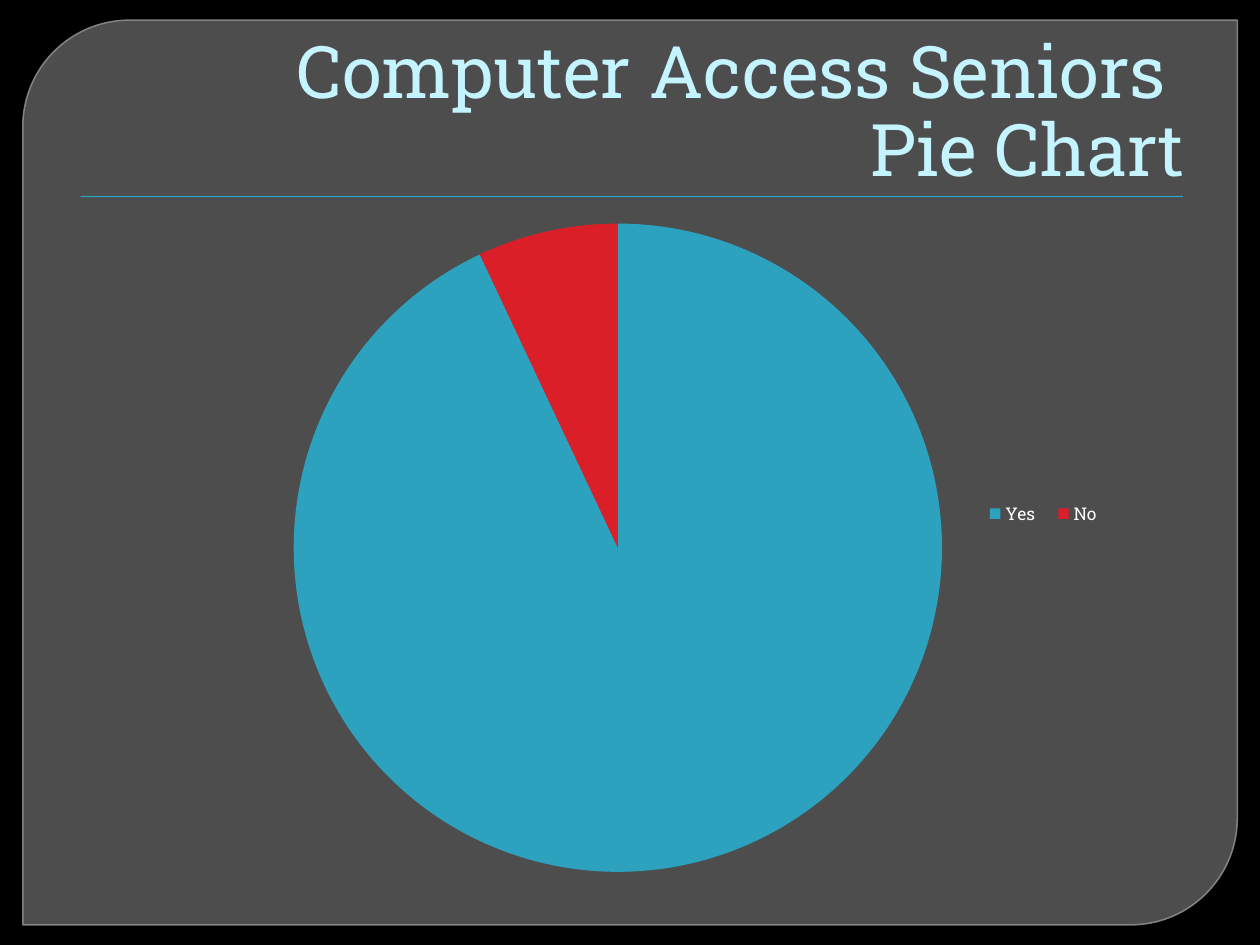
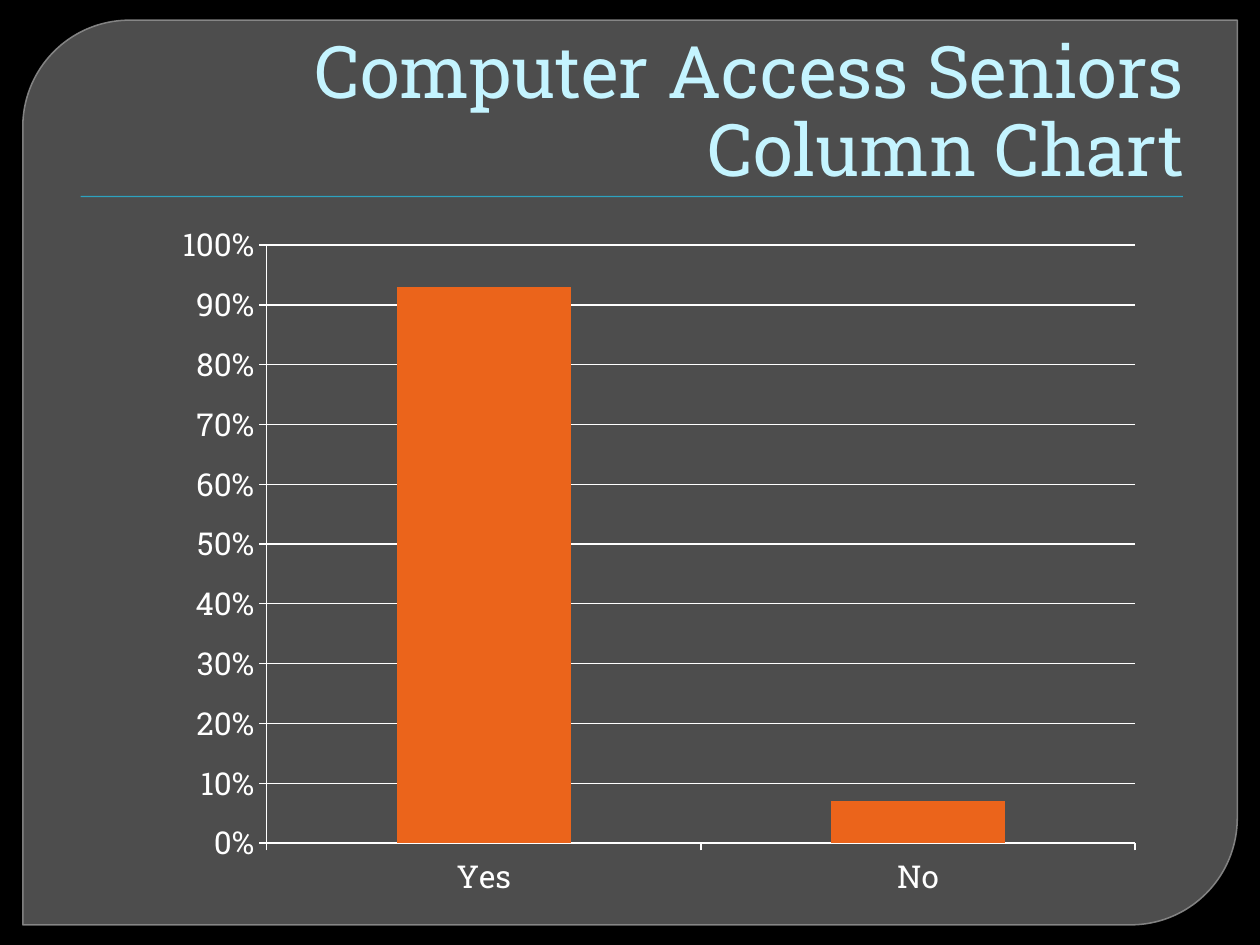
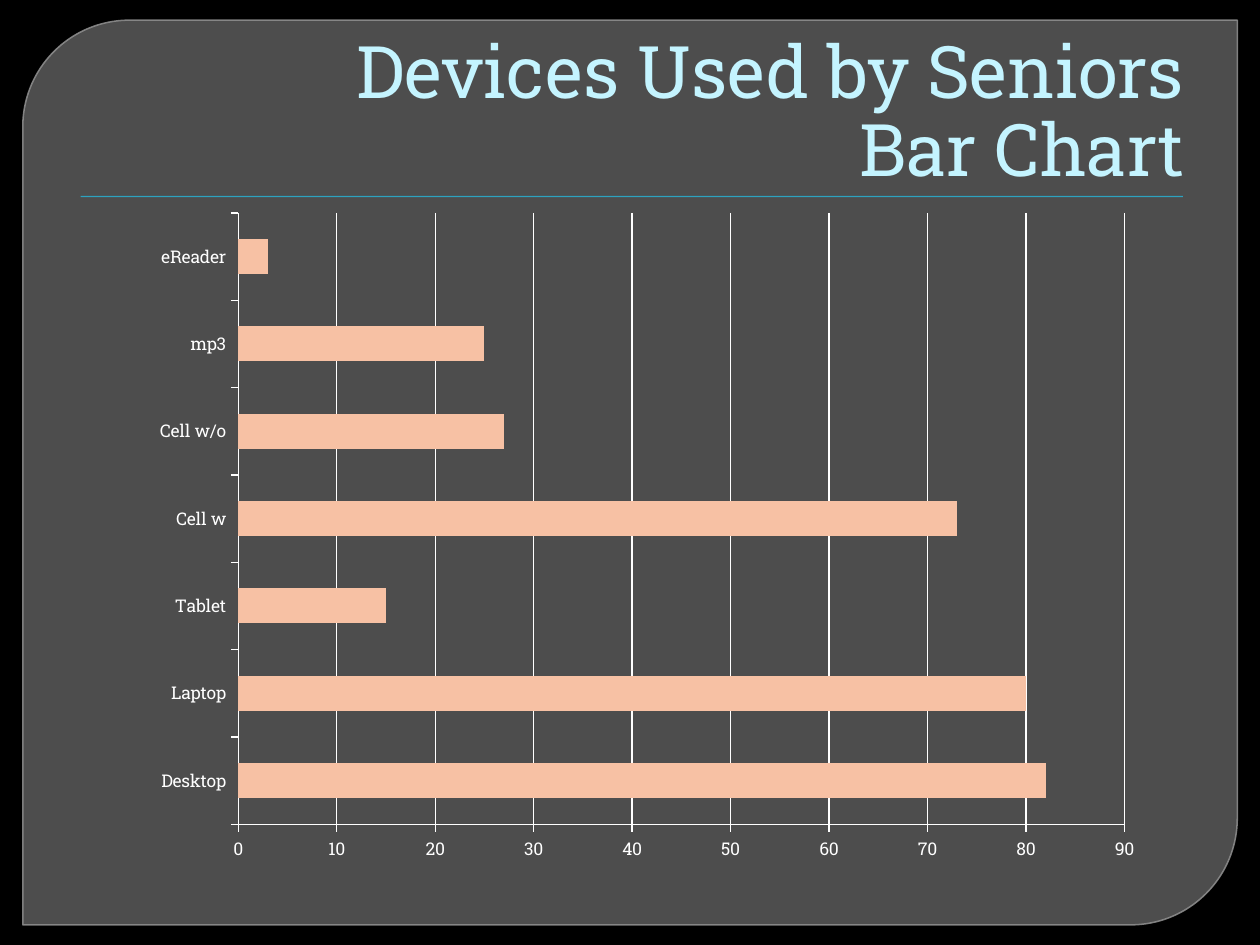
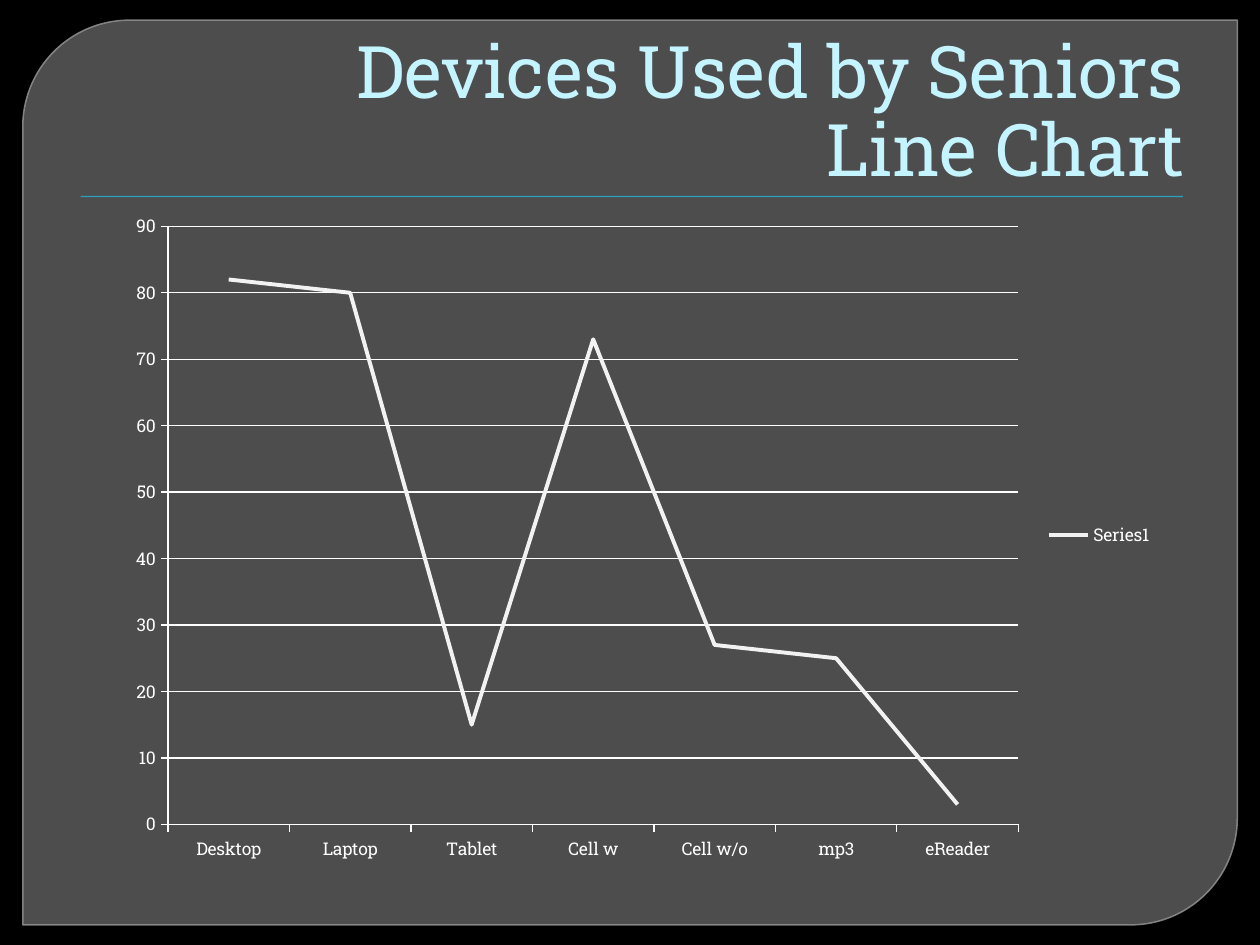
"""Build four dark slides that chart computer access and devices among seniors."""
from dataclasses import dataclass

from lxml import etree
from pptx import Presentation
from pptx.chart.data import CategoryChartData
from pptx.dml.color import RGBColor
from pptx.enum import chart as ch, shapes, text
from pptx.oxml.ns import qn
from pptx.util import Pt


@dataclass(frozen=True)
class Theme:
    font: str = "Roboto Slab"
    back: str = "000000"
    panel: str = "777777"
    edge: str = "8E8E8E"
    title: str = "C4F4FF"
    white: str = "FFFFFF"
    blue: str = "2DA2BF"
    red: str = "DA1F28"
    orange: str = "EB641B"
    peach: str = "F7C1A4"
    pale: str = "F2F2F2"
    title_size: float = 41.4
    small: int = 10
    large: int = 18
    hairline: float = 0.75


class Deck:
    def __init__(self, theme):
        self.t = theme
        self.prs = Presentation()
        self.prs.slide_width, self.prs.slide_height = Pt(720), Pt(540)
        self.layout = self.prs.slide_layouts[5]
        self.s = None
        self.paint(self.prs.slide_master.background.fill, theme.back)

    def paint(self, fill, color, alpha=None):
        fill.solid()
        fill.fore_color.rgb = RGBColor.from_string(color)
        if alpha is not None:
            clr = fill._xPr.find(".//" + qn("a:srgbClr"))
            etree.SubElement(clr, qn("a:alpha")).set("val", str(alpha * 1000))

    def style_font(self, font, size, color):
        font.name, font.size = self.t.font, Pt(size)
        font.color.rgb = RGBColor.from_string(color)

    def style_line(self, line, color, width):
        self.paint(line.fill, color)
        line.width = Pt(width)

    def shape(self, kind, box, color, alpha=None):
        sp = self.s.shapes.add_shape(kind, *map(Pt, box))
        sp.shadow.inherit = False
        self.paint(sp.fill, color, alpha)
        sp.line.fill.background()
        return sp

    def backdrop(self):
        panel = self.shape(shapes.MSO_SHAPE.ROUND_2_DIAG_RECTANGLE,
                           (13, 11.5, 694, 517), self.t.panel, 65)
        panel.adjustments[0], panel.adjustments[1] = 0.118, 0
        panel.line.width = Pt(0.87)
        self.paint(panel.line.fill, self.t.edge, 88)
        rule = self.shape(shapes.MSO_SHAPE.RECTANGLE, (46, 112, 630, 0.75), self.t.blue)
        for i, sp in enumerate((panel, rule)):
            sp._element.nvSpPr.cNvPr.set("id", str(20 + i))
            self.layout.shapes._spTree.insert(2 + i, sp._element)

    def slide(self, title):
        first = self.s is None
        self.s = self.prs.slides.add_slide(self.layout)
        if first:
            self.backdrop()
        sp = self.s.shapes.title
        sp.left, sp.top, sp.width, sp.height = map(Pt, (36, 20, 648, 90))
        tf = sp.text_frame
        tf.text = title
        tf.auto_size = text.MSO_AUTO_SIZE.NONE
        tf.vertical_anchor = text.MSO_ANCHOR.BOTTOM
        tf.margin_top = tf.margin_bottom = 0
        p = tf.paragraphs[0]
        p.alignment = text.PP_ALIGN.RIGHT
        p.line_spacing = 0.9
        self.style_font(p.font, self.t.title_size, self.t.title)

    def place(self, el, index, box, inner=False):
        for old in el.findall(qn("c:layout")):
            el.remove(old)
        layout = etree.Element(qn("c:layout"))
        manual = etree.SubElement(layout, qn("c:manualLayout"))
        values = [("layoutTarget", "inner")] if inner else []
        values += [("xMode", "edge"), ("yMode", "edge"), *zip("xywh", box)]
        for tag, value in values:
            etree.SubElement(manual, qn("c:" + tag)).set("val", str(value))
        el.insert(index, layout)

    def chart(self, kind, box, plot, cats, vals, size, name="Series 1", fmt="General"):
        data = CategoryChartData(number_format=fmt)
        data.categories = cats
        data.add_series(name, vals)
        chart = self.s.shapes.add_chart(kind, *map(Pt, box), data).chart
        chart.has_title = chart.has_legend = False
        self.style_font(chart.font, size, self.t.white)
        self.place(chart._chartSpace.chart.plotArea, 0, plot, inner=True)
        return chart

    def legend(self, chart, box=None):
        chart.has_legend = True
        chart.legend.position = ch.XL_LEGEND_POSITION.RIGHT
        chart.legend.include_in_layout = False
        if box:
            self.place(chart.legend._element, 1, box)

    def axes(self, chart, top, step, fmt="General"):
        val = chart.value_axis
        val.minimum_scale, val.maximum_scale, val.major_unit = 0, top, step
        val.has_major_gridlines = True
        val.tick_labels.number_format = fmt
        val.tick_labels.number_format_is_linked = False
        for axis in (val, chart.category_axis):
            axis.major_tick_mark = ch.XL_TICK_MARK.OUTSIDE
            self.style_line(axis.format.line, self.t.white, self.t.hairline)
        self.style_line(val.major_gridlines.format.line, self.t.white, self.t.hairline)

    def pie(self, box, plot, legend, cats, vals, colors):
        chart = self.chart(ch.XL_CHART_TYPE.PIE, box, plot, cats, vals, self.t.small)
        self.legend(chart, legend)
        for i, color in enumerate(colors):
            self.paint(chart.plots[0].series[0].points[i].format.fill, color)

    def bars(self, kind, box, plot, cats, vals, color, size, top, step, fmt="General"):
        chart = self.chart(kind, box, plot, cats, vals, size, fmt=fmt)
        self.axes(chart, top, step, fmt)
        bars = chart.plots[0]
        bars.gap_width, bars.vary_by_categories = 150, False
        self.paint(bars.series[0].format.fill, color)

    def line(self, box, plot, cats, vals, name, top, step):
        chart = self.chart(ch.XL_CHART_TYPE.LINE_STACKED, box, plot, cats, vals,
                           self.t.small, name)
        self.axes(chart, top, step)
        self.legend(chart)
        chart.plots[0].vary_by_categories = False
        series = chart.plots[0].series[0]
        series.smooth = False
        series.marker.style = ch.XL_MARKER_STYLE.NONE
        self.style_line(series.format.line, self.t.pale, 2.25)


def main():
    t = Theme()
    d = Deck(t)
    answers = ("Yes", "No")
    devices = ("Desktop", "Laptop", "Tablet", "Cell w", "Cell w/o", "mp3", "eReader")
    users = (82, 80, 15, 73, 27, 25, 3)

    d.slide("Computer Access Seniors \vPie Chart")
    d.pie((102, 120, 540, 390), (0.12, 0.02, 0.69, 0.95), (0.84, 0.41, 0.15, 0.07),
          answers, (93, 7), (t.blue, t.red))

    d.slide("Computer Access Seniors\vColumn Chart")
    d.bars(ch.XL_CHART_TYPE.COLUMN_CLUSTERED, (96, 120, 564, 402),
           (0.1, 0.05, 0.88, 0.85), answers, (0.93, 0.07), t.orange, t.large,
           1, 0.1, "0%")

    d.slide("Devices Used by Seniors\vBar Chart")
    d.bars(ch.XL_CHART_TYPE.BAR_CLUSTERED, (78, 114, 582, 384),
           (0.1, 0.02, 0.87, 0.91), devices, users, t.peach, t.small, 90, 10)

    d.slide("Devices Used by Seniors\vLine Chart")
    d.line((66, 114, 600, 384), (0.05, 0.04, 0.81, 0.89), devices, users,
           "Series1", 90, 10)

    d.prs.save("out.pptx")


if __name__ == "__main__":
    main()
